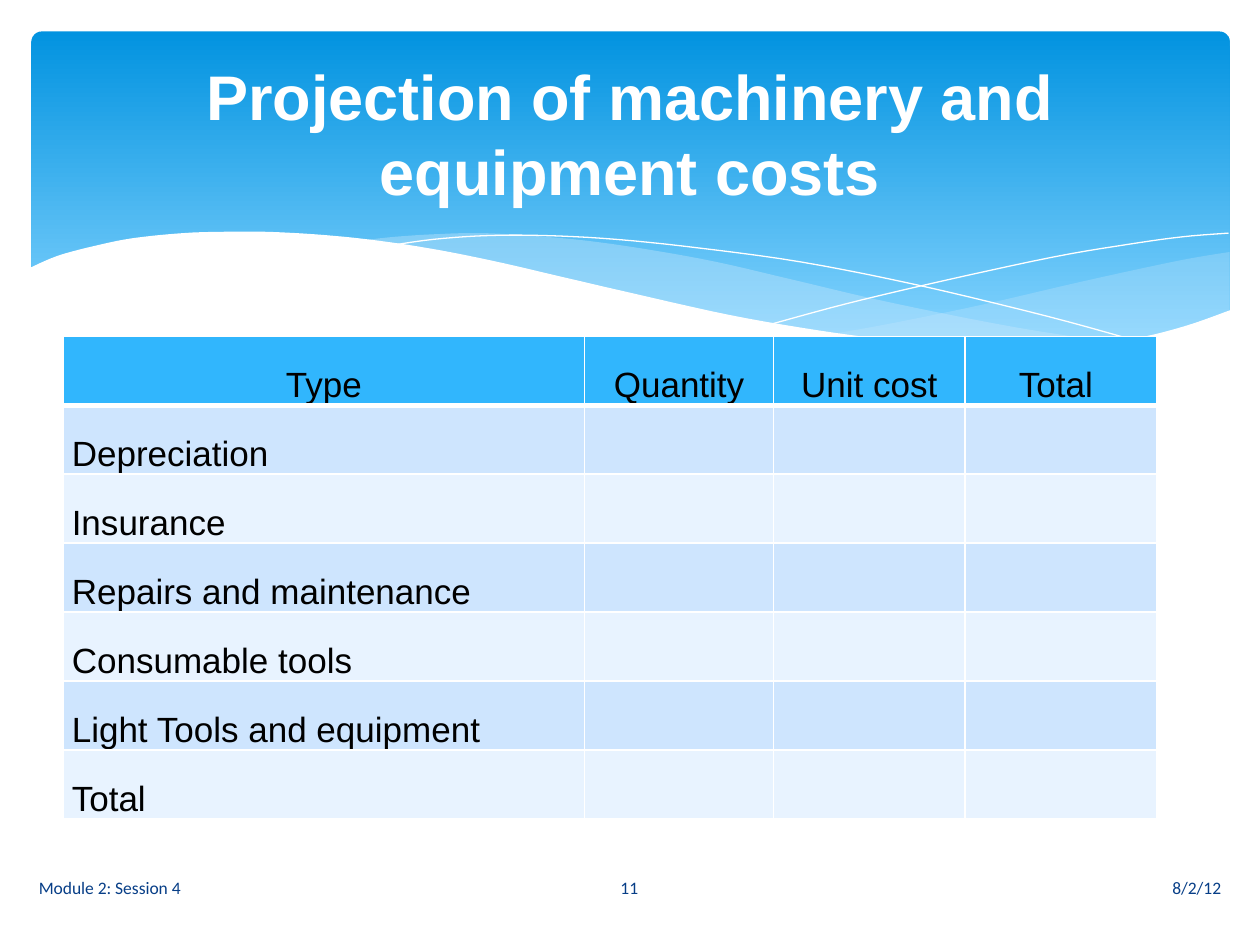
from dataclasses import dataclass

from lxml import etree
from pptx import Presentation
from pptx import util as u
from pptx.dml.color import RGBColor
from pptx.enum import shapes, text
from pptx.oxml import ns

Inches, Pt = u.Inches, u.Pt
ALIGN, ANCHOR = text.PP_ALIGN, text.MSO_ANCHOR


@dataclass(frozen=True)
class Theme:
    white: str = "FFFFFF"
    black: str = "000000"
    sky_top: str = "0293E0"
    sky_bottom: str = "83D3FE"
    wave: str = "C6E7FC"
    header: str = "31B6FD"
    bands: tuple = ("CEE5FE", "E8F3FF")
    footer: str = "073E87"
    heading_font: str = "Arial"
    footer_font: str = "Calibri"
    title_size: int = 36
    table_size: int = 20
    footer_size: int = 10


T = Theme()

RIGHT_WAVE_TOP = [(9.76, 2), (9.35, 2.07), (8.61, 2.23), (7.79, 2.42), (7.06, 2.57), (6.61, 2.65)]
RIGHT_WAVE_BOTTOM = [(6.61, 2.65), (7.19, 2.72), (7.69, 2.77), (8.14, 2.78), (8.63, 2.75),
                     (9.05, 2.69), (9.42, 2.59), (9.76, 2.47)]
LEFT_WAVE_TOP = [(8.93, 2.73), (8.07, 2.6), (7.06, 2.4), (6.29, 2.22), (5.69, 2.08), (5.14, 1.98),
                 (4.65, 1.91), (4.2, 1.87), (3.8, 1.85), (3.44, 1.86), (3.13, 1.88), (2.86, 1.91)]
LEFT_WAVE_BOTTOM = [(2.86, 1.91), (3.42, 1.99), (4.04, 2.11), (4.49, 2.22), (5.3, 2.4), (6.01, 2.55),
                    (6.65, 2.66), (7.22, 2.74), (7.73, 2.77), (8.18, 2.78), (8.57, 2.77), (8.93, 2.73)]
FALLING_LINE = [(3.09, 1.95), (3.44, 1.9), (3.87, 1.87), (4.33, 1.87), (4.89, 1.9), (5.56, 1.97),
                (6.36, 2.08), (7.27, 2.26), (8.31, 2.51), (9.07, 2.72)]
RISING_LINE = [(6.13, 2.57), (6.72, 2.41), (7.48, 2.23), (8.36, 2.04), (8.95, 1.94), (9.38, 1.88), (9.75, 1.85)]
WHITE_WAVE = [(9.77, 2.46), (9.4, 2.59), (8.99, 2.69), (8.5, 2.75), (8.09, 2.77), (7.61, 2.75),
              (7.08, 2.7), (6.48, 2.62), (5.79, 2.5), (5.03, 2.33), (4.47, 2.2), (3.91, 2.07),
              (3.4, 1.97), (2.92, 1.9), (2.5, 1.86), (2.11, 1.84), (1.77, 1.84), (1.46, 1.85),
              (1.06, 1.89), (0.76, 1.95), (0.46, 2.03), (0.23, 2.13)]


def rgb(value):
    return RGBColor.from_string(value)


def smooth(points, steps=5):
    padded = [points[0], *points, points[-1]]
    curve = []
    for a, b, c, d in zip(padded, padded[1:], padded[2:], padded[3:]):
        for t in (i / steps for i in range(steps)):
            curve.append(tuple(
                q + t * (r - p + t * (2 * p - 5 * q + 4 * r - s + t * (3 * q - p - 3 * r + s))) / 2
                for p, q, r, s in zip(a, b, c, d)))
    return curve + [points[-1]]


def add_outline(s, points, close):
    start, *rest = [(Inches(x), Inches(y)) for x, y in points]
    builder = s.shapes.build_freeform(*start)
    builder.add_line_segments(rest, close=close)
    sp = builder.convert_to_shape()
    sp.shadow.inherit = False
    return sp


def add_wave(s, points, color, opacity=100):
    sp = add_outline(s, points, True)
    sp.fill.solid()
    sp.fill.fore_color.rgb = rgb(color)
    sp.line.fill.background()
    if opacity < 100:
        clr = sp.fill._xPr.find(".//" + ns.qn("a:srgbClr"))
        etree.SubElement(clr, ns.qn("a:alpha"), val=str(opacity * 1000))


def add_curve(s, points):
    sp = add_outline(s, smooth(points), False)
    sp.fill.background()
    sp.line.color.rgb = rgb(T.white)
    sp.line.width = Pt(0)


def add_sky(s):
    sp = s.shapes.add_shape(shapes.MSO_SHAPE.ROUNDED_RECTANGLE,
                            Inches(0.25), Inches(0.25), Inches(9.51), Inches(2.7))
    sp.adjustments[0] = 0.03
    sp.shadow.inherit = False
    sp.line.fill.background()
    sp.fill.gradient()
    sp.fill.gradient_angle = 270
    for stop, position, color in zip(sp.fill.gradient_stops, (0, 0.9), (T.sky_top, T.sky_bottom)):
        stop.position = position
        stop.color.rgb = rgb(color)


def add_run(p, words, font, size, color, bold=False):
    r = p.add_run()
    r.text = words
    r.font.name, r.font.size, r.font.bold = font, Pt(size), bold
    r.font.color.rgb = rgb(color)


def add_text(s, box, words, align, font, size, color, bold=False):
    tf = s.shapes.add_textbox(*map(Inches, box)).text_frame
    tf.word_wrap = True
    tf.vertical_anchor = ANCHOR.MIDDLE
    p = tf.paragraphs[0]
    p.alignment = align
    add_run(p, words, font, size, color, bold)


def add_borders(cell, bottom):
    tc_pr = cell._tc.get_or_add_tcPr()
    widths = {"lnL": 1, "lnR": 1, "lnT": 1, "lnB": bottom}
    for i, (tag, width) in enumerate(widths.items()):
        ln = etree.Element(ns.qn("a:" + tag), w=str(Pt(width)))
        fill = etree.SubElement(ln, ns.qn("a:solidFill"))
        etree.SubElement(fill, ns.qn("a:srgbClr"), val=T.white)
        tc_pr.insert(i, ln)


def fill_cell(cell, words, color, header):
    cell.fill.solid()
    cell.fill.fore_color.rgb = rgb(color)
    add_borders(cell, 3 if header else 1)
    if not words:
        return
    cell.vertical_anchor = ANCHOR.BOTTOM
    cell.margin_left = cell.margin_right = Inches(0.07)
    cell.margin_top = cell.margin_bottom = 0
    p = cell.text_frame.paragraphs[0]
    p.alignment = ALIGN.CENTER if header else ALIGN.LEFT
    p.line_spacing = 1.15
    add_run(p, words, T.heading_font, T.table_size, T.black)


def add_cost_table(s, headers, items):
    rows = [headers] + [[item] + [""] * (len(headers) - 1) for item in items]
    table = s.shapes.add_table(len(rows), len(headers), Inches(0.5), Inches(2.67),
                               Inches(8.69), Inches(3.83)).table
    for column, width in zip(table.columns, (4.14, 1.5, 1.52, 1.52)):
        column.width = Inches(width)
    for i, row in enumerate(rows):
        color = T.bands[(i - 1) % 2] if i else T.header
        for j, words in enumerate(row):
            fill_cell(table.cell(i, j), words, color, i == 0)


def main():
    prs = Presentation()
    prs.slide_width, prs.slide_height = Inches(10), Inches(7.5)
    s = prs.slides.add_slide(prs.slide_layouts[6])

    add_sky(s)
    add_wave(s, smooth(RIGHT_WAVE_TOP) + smooth(RIGHT_WAVE_BOTTOM), T.wave, 29)
    add_wave(s, smooth(LEFT_WAVE_TOP) + smooth(LEFT_WAVE_BOTTOM), T.wave, 40)
    add_curve(s, FALLING_LINE)
    add_curve(s, RISING_LINE)
    add_wave(s, smooth(WHITE_WAVE) + [(0.23, 3.29), (9.77, 3.29)], T.white)

    add_cost_table(s, ["Type", "Quantity", "Unit cost", "Total "],
                   ["Depreciation", "Insurance", "Repairs and maintenance",
                    "Consumable tools", "Light Tools and equipment", "Total"])
    add_text(s, (0.5, 0.37, 9, 1.37), "Projection of machinery and equipment costs",
             ALIGN.CENTER, T.heading_font, T.title_size, T.white, True)
    for left, width, words, align in ((5.65, 4.14, "8/2/12", ALIGN.RIGHT),
                                      (0.21, 4.14, "Module 2: Session 4", ALIGN.LEFT),
                                      (4.36, 1.27, "11", ALIGN.CENTER)):
        add_text(s, (left, 6.84, width, 0.4), words, align, T.footer_font, T.footer_size, T.footer)

    prs.save("out.pptx")


if __name__ == "__main__":
    main()
